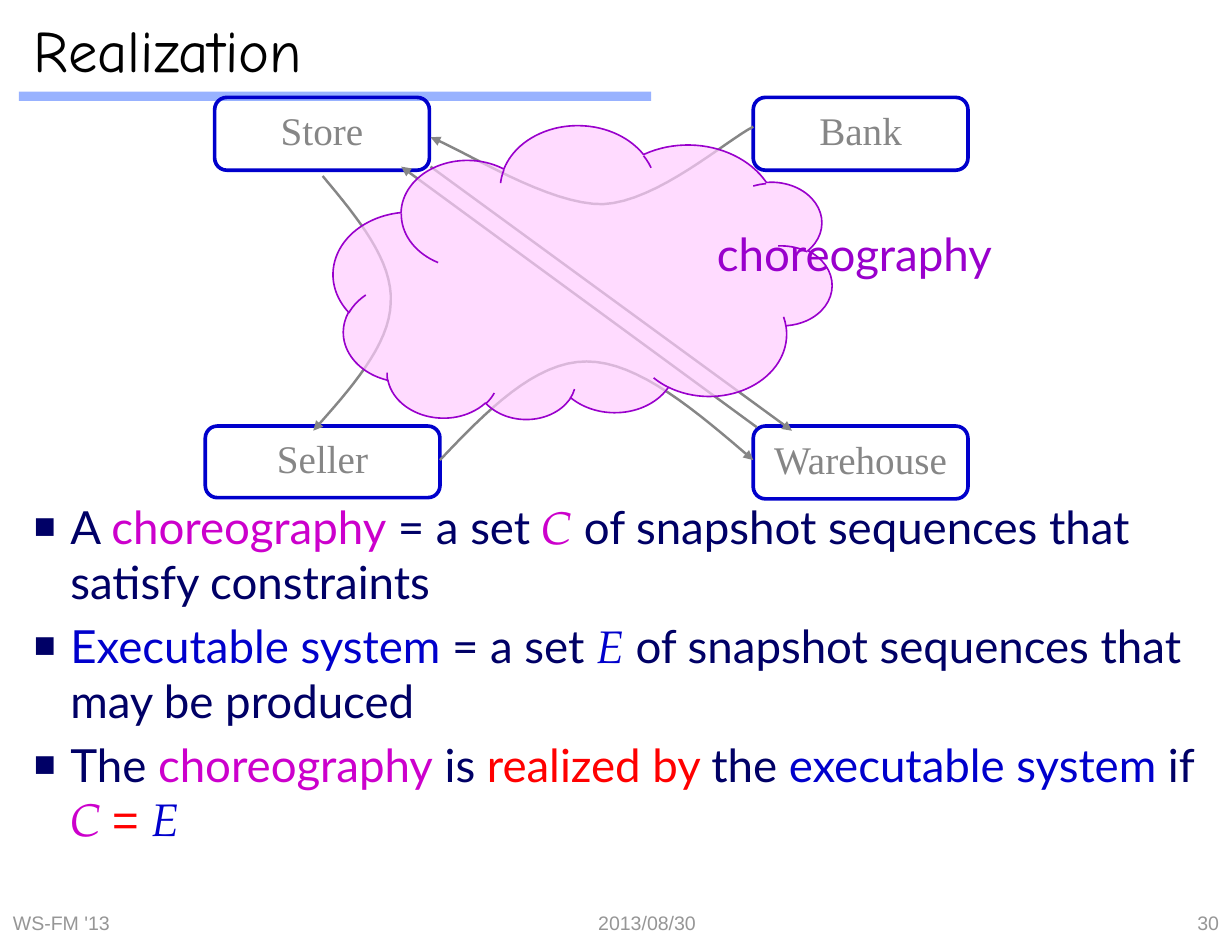
from lxml import etree
from pptx import Presentation
from pptx.dml.color import RGBColor
from pptx.enum.shapes import MSO_CONNECTOR as Link, MSO_SHAPE as Shape
from pptx.enum.text import MSO_ANCHOR as Anchor, MSO_AUTO_SIZE as Auto, PP_ALIGN as Align
from pptx.oxml.ns import qn
from pptx.util import Inches, Pt

SANS, SERIF, MATH = "Lato", "Times New Roman", "TeX Gyre Pagella"
NAVY, BLUE, PINK, RED = "000066", "0000CC", "CC00CC", "FF0000"
GRAY, PALE, PLUM = "868686", "969696", "9900CC"


def color(code):
    return RGBColor.from_string(code)


def add(root, tag, **attrs):
    node = etree.SubElement(root, qn(tag))
    for key, value in attrs.items():
        node.set(key, str(value))
    return node


def put(para, text, font=SANS, size=28, tint=NAVY, italic=False):
    run = para.add_run()
    run.text = text
    run.font.name = font
    run.font.size = Pt(size)
    run.font.italic = italic
    run.font.color.rgb = color(tint)


def curve(start, *parts):
    points = [start]
    for b, c, d in parts:
        a = points[-1]
        for step in range(1, 17):
            t = step / 16
            u = 1 - t
            points.append(tuple(
                u**3 * p + 3 * u * u * t * q + 3 * u * t * t * r + t**3 * s
                for p, q, r, s in zip(a, b, c, d)))
    return points


class Deck:
    def __init__(self, wide, high):
        self.file = Presentation()
        self.file.slide_width = Inches(wide)
        self.file.slide_height = Inches(high)
        self.slide = self.file.slides.add_slide(self.file.slide_layouts[1])
        self.shapes = self.slide.shapes

    def place(self, item, left, top, wide, high):
        item.left, item.top = Inches(left), Inches(top)
        item.width, item.height = Inches(wide), Inches(high)

    def frame(self, item, anchor=Anchor.MIDDLE):
        frame = item.text_frame
        frame.auto_size = Auto.NONE
        frame.word_wrap = True
        frame.vertical_anchor = anchor
        frame.margin_left = frame.margin_right = Inches(0.11)
        frame.margin_top = frame.margin_bottom = Inches(0.05)
        return frame

    def shape(self, kind, area, fill=None, alpha=100, line=None, width=1):
        item = self.shapes.add_shape(kind, *map(Inches, area))
        item.shadow.inherit = False
        if fill:
            item.fill.solid()
            item.fill.fore_color.rgb = color(fill)
            tone = item.fill._xPr.find(qn("a:solidFill"))[0]
            add(tone, "a:alpha", val=alpha * 1000)
        else:
            item.fill.background()
        if line:
            item.line.color.rgb = color(line)
            item.line.width = Pt(width)
        else:
            item.line.fill.background()
        return item

    def node(self, name, *area):
        item = self.shape(Shape.ROUNDED_RECTANGLE, area, line=BLUE, width=2.25)
        para = self.frame(item).paragraphs[0]
        para.alignment = Align.CENTER
        para.line_spacing = 0.85
        put(para, name, font=SERIF, size=24, tint=GRAY)

    def tip(self, item):
        item.line.color.rgb = color(GRAY)
        item.line.width = Pt(1.5)
        add(item.line._get_or_add_ln(), "a:tailEnd", type="triangle")

    def arrow(self, start, end):
        item = self.shapes.add_connector(Link.STRAIGHT, *map(Inches, start + end))
        self.tip(item)
        add(item._element.spPr, "a:effectLst")

    def bend(self, start, *parts):
        points = [tuple(map(Inches, point)) for point in curve(start, *parts)]
        path = self.shapes.build_freeform(*points[0])
        path.add_line_segments(points[1:], close=False)
        item = path.convert_to_shape()
        item.shadow.inherit = False
        item.fill.background()
        self.tip(item)

    def label(self, text, area, align=Align.LEFT, anchor=Anchor.MIDDLE, space=1.0, **style):
        frame = self.frame(self.shapes.add_textbox(*map(Inches, area)), anchor)
        para = frame.paragraphs[0]
        para.alignment = align
        para.line_spacing = space
        put(para, text, **style)

    def title(self, text, *area):
        item = self.shapes.title
        self.place(item, *area)
        para = self.frame(item).paragraphs[0]
        para.alignment = Align.LEFT
        put(para, text, font="Comic Neue", size=36, tint="000000")

    def bullets(self, rows, *area):
        item = self.slide.placeholders[1]
        self.place(item, *area)
        frame = self.frame(item, Anchor.TOP)
        for index, row in enumerate(rows):
            para = frame.add_paragraph() if index else frame.paragraphs[0]
            para.space_before = Pt(0)
            para.space_after = Pt(5.6)
            props = para._p.get_or_add_pPr()
            props.set("marL", str(Inches(0.31)))
            props.set("indent", str(-Inches(0.31)))
            add(add(props, "a:buClr"), "a:srgbClr", val=NAVY)
            add(props, "a:buSzPct", val=80000)
            add(props, "a:buChar", char="■")
            for text, style in row:
                put(para, text, **style)


def main():
    deck = Deck(10.5, 8)
    deck.shape(Shape.RECTANGLE, (0.16, 0.78, 5.39, 0.08), fill="3366FF", alpha=50)
    deck.title("Realization", 0.18, 0, 10.15, 0.83)

    plain, pink, blue, red = ({"tint": tint} for tint in (NAVY, PINK, BLUE, RED))
    set_c = {"font": MATH, "tint": PINK, "italic": True}
    set_e = {"font": MATH, "tint": BLUE, "italic": True}
    deck.bullets([
        [("A ", plain), ("choreography", pink), (" = a set ", plain), ("C", set_c),
         (" of snapshot sequences that satisfy constraints", plain)],
        [("Executable system", blue), (" = a set ", plain), ("E", set_e),
         (" of snapshot sequences that may be produced", plain)],
        [("The ", plain), ("choreography", pink), (" is ", plain),
         ("realized by ", red), ("the ", plain), ("executable system", blue),
         (" if ", plain), ("C ", set_c), ("= ", {"font": "Arial", "tint": RED}),
         ("E", set_e)],
    ], 0.18, 4.2, 10.15, 3.47)

    deck.node("Store", 1.83, 0.83, 1.83, 0.62)
    deck.node("Seller", 1.75, 3.63, 2, 0.61)
    deck.node("Warehouse", 6.42, 3.63, 1.83, 0.62)
    deck.node("Bank", 6.42, 0.83, 1.83, 0.62)

    deck.arrow((6.45, 3.64), (3.42, 1.42))
    deck.arrow((3.67, 1.42), (6.75, 3.67))
    deck.bend((2.75, 1.5), ((3.05, 1.86), (3.35, 2.22), (3.33, 2.58)),
              ((3.32, 2.94), (2.99, 3.31), (2.67, 3.67)))
    deck.bend((3.75, 3.92), ((4.15, 3.5), (4.56, 3.08), (5, 3.08)),
              ((5.44, 3.08), (5.93, 3.5), (6.42, 3.92)))
    deck.bend((6.42, 1.08), ((6.2, 1.19), (5.6, 1.72), (5.14, 1.74)),
              ((4.68, 1.75), (3.97, 1.29), (3.67, 1.17)))

    cloud = deck.shape(Shape.CLOUD, (2.84, 1.08, 4.25, 2.51), fill="FFCCFF",
                       alpha=70, line=PLUM)
    cloud.rotation = 180.9
    deck.label("choreography", (6, 1.93, 2.7, 0.53), anchor=Anchor.TOP,
               space=0.9, tint=PLUM)

    small = {"font": "Arial", "size": 12, "tint": PALE}
    deck.label("WS-FM '13", (0, 7.73, 3.33, 0.27), **small)
    deck.label("2013/08/30", (4.42, 7.73, 2.19, 0.27), align=Align.CENTER, **small)
    deck.label("30", (8.31, 7.73, 2.19, 0.27), align=Align.RIGHT, **small)
    deck.file.save("out.pptx")


if __name__ == "__main__":
    main()
